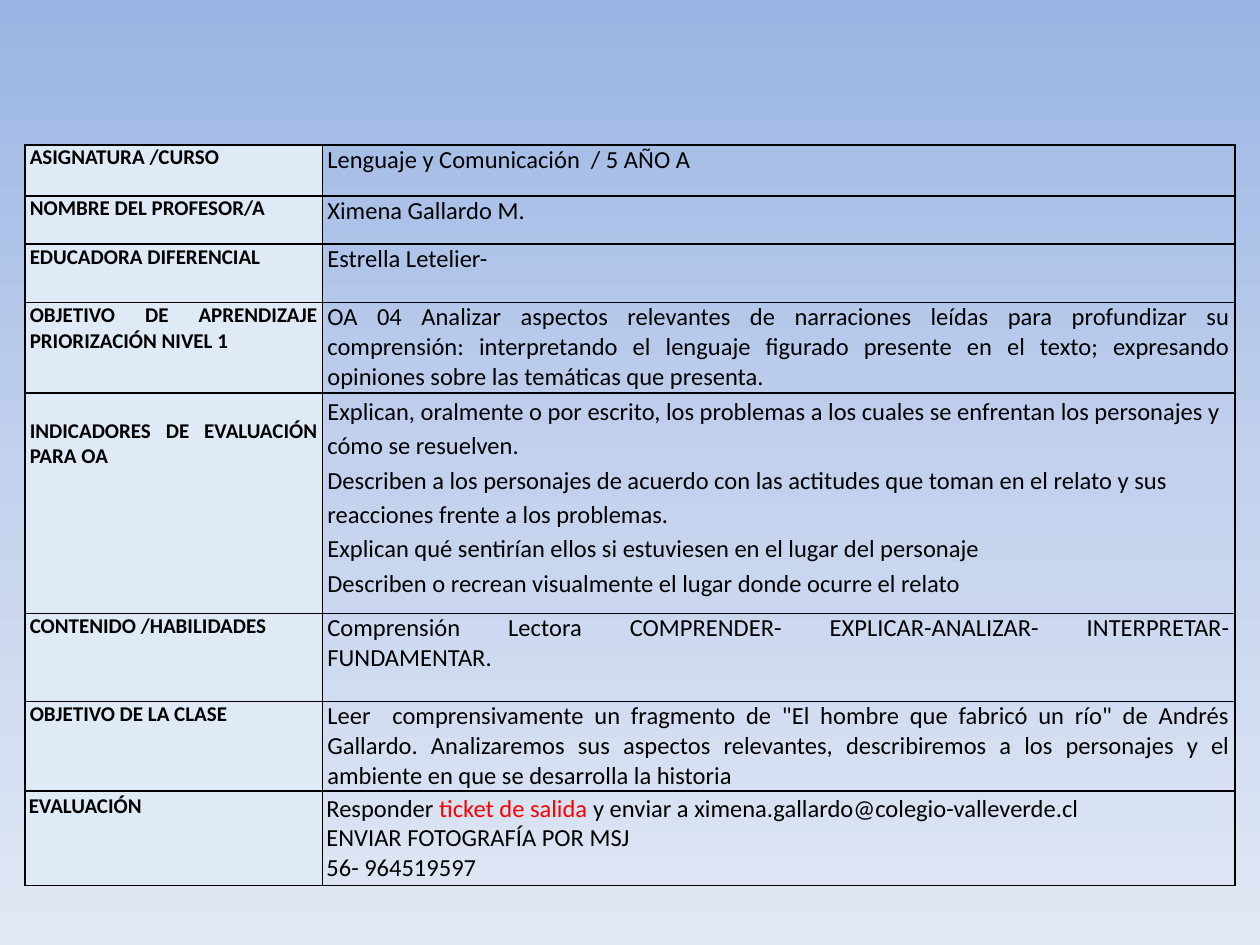
"""Build a one-slide lesson plan with a two-column table on a blue gradient."""
from copy import deepcopy

from lxml.etree import SubElement
from pptx import Presentation
from pptx.dml.color import RGBColor
from pptx.enum.text import PP_ALIGN
from pptx.oxml.ns import qn
from pptx.util import Cm, Pt

LABEL = {"size": Pt(12), "bold": True, "name": "Calibri"}
DETAIL = {"size": Pt(14), "bold": False, "name": "Calibri"}
CELL_MARGINS = {"margin_left": Cm(0.1), "margin_right": Cm(0.1), "margin_top": 0, "margin_bottom": 0}
LAST_ROW_MARGINS = {"margin_left": Cm(0.08), "margin_right": Cm(0.08), "margin_top": Cm(0.05), "margin_bottom": Cm(0.05)}
JUSTIFIED = {"alignment": PP_ALIGN.JUSTIFY}
SPACED = {"alignment": PP_ALIGN.LEFT, "line_spacing": 1.15}
HIGHLIGHT = "ticket de salida "

ROWS = [
    (1.03, "ASIGNATURA /CURSO", ["Lenguaje y Comunicación  / 5 AÑO A"]),
    (0.97, "NOMBRE DEL PROFESOR/A", ["Ximena Gallardo M."]),
    (1.18, "EDUCADORA DIFERENCIAL", ["Estrella Letelier-"]),
    (1.82, "OBJETIVO DE APRENDIZAJE PRIORIZACIÓN NIVEL 1", [
        "OA 04 Analizar aspectos relevantes de narraciones leídas para profundizar su "
        "comprensión: interpretando el lenguaje figurado presente en el texto; expresando "
        "opiniones sobre las temáticas que presenta."]),
    (4.45, "INDICADORES DE EVALUACIÓN PARA OA", [
        "Explican, oralmente o por escrito, los problemas a los cuales se enfrentan los "
        "personajes y cómo se resuelven.",
        "Describen a los personajes de acuerdo con las actitudes que toman en el relato y sus "
        "reacciones frente a los problemas.",
        "Explican qué sentirían ellos si estuviesen en el lugar del personaje",
        "Describen o recrean visualmente el lugar donde ocurre el relato"]),
    (1.77, "CONTENIDO /HABILIDADES", [
        "Comprensión Lectora COMPRENDER- EXPLICAR-ANALIZAR- INTERPRETAR- FUNDAMENTAR."]),
    (1.81, "OBJETIVO DE LA CLASE", [
        'Leer  comprensivamente un fragmento de "El hombre que fabricó un río" de Andrés '
        "Gallardo. Analizaremos sus aspectos relevantes, describiremos a los personajes y el "
        "ambiente en que se desarrolla la historia"]),
    (1.87, "EVALUACIÓN", [
        "Responder ticket de salida y enviar a ximena.gallardo@colegio-valleverde.cl",
        "ENVIAR FOTOGRAFÍA POR MSJ",
        "56- 964519597"]),
]


def color(hex_value):
    """Return the RGB colour for a hex string."""
    return RGBColor.from_string(hex_value)


def apply(target, values):
    """Set every attribute in values on target."""
    for name, value in values.items():
        setattr(target, name, value)


presentation = Presentation()
presentation.slide_width, presentation.slide_height = Cm(25.4), Cm(19.05)
slide = presentation.slides.add_slide(presentation.slide_layouts[6])

background = slide.background.fill
background.gradient()
background.gradient_angle = 270
first_stop = slide.element.xpath(".//a:gs")[0]
first_stop.addnext(deepcopy(first_stop))
for stop, (position, shade) in zip(background.gradient_stops, [(0, "9AB5E4"), (0.5, "C2D1ED"), (1, "E1E8F5")]):
    stop.color.rgb = color(shade)
    stop.position = position

table_height = sum(height for height, _, _ in ROWS)
table = slide.shapes.add_table(len(ROWS), 2, Cm(0.5), Cm(2.92), Cm(24.4), Cm(table_height)).table
apply(table, {"first_row": False, "horz_banding": False})
for column, width in zip(table.columns, (6, 18.4)):
    column.width = Cm(width)

for row, (height, label, details) in zip(table.rows, ROWS):
    row.height = Cm(height)
    margins = LAST_ROW_MARGINS if label == "EVALUACIÓN" else CELL_MARGINS
    detail_format = SPACED if len(details) == 4 else JUSTIFIED
    contents = [([label], LABEL, JUSTIFIED), (details, DETAIL, detail_format)]
    for cell, (lines, font_format, paragraph_format) in zip(row.cells, contents):
        apply(cell, margins)
        cell.text = "\n".join(lines)
        if font_format is LABEL:
            cell.fill.solid()
            cell.fill.fore_color.rgb = color("DEEAF6")
        else:
            cell.fill.background()
        for paragraph, line in zip(cell.text_frame.paragraphs, lines):
            apply(paragraph, paragraph_format)
            paragraph.clear()
            before, highlight, after = line.partition(HIGHLIGHT)
            for text in filter(None, (before, highlight, after)):
                run = paragraph.add_run()
                run.text = text
                apply(run.font, font_format)
                run.font.color.rgb = color("FF0000" if text == HIGHLIGHT else "000000")
        properties = cell._tc.get_or_add_tcPr()
        for index, side in enumerate(("lnL", "lnR", "lnT", "lnB")):
            border = SubElement(properties, qn(f"a:{side}"), w=str(Pt(1)))
            SubElement(SubElement(border, qn("a:solidFill")), qn("a:srgbClr"), val="000000")
            properties.insert(index, border)

table.cell(4, 0).margin_top = Cm(0.51)

presentation.save("out.pptx")
